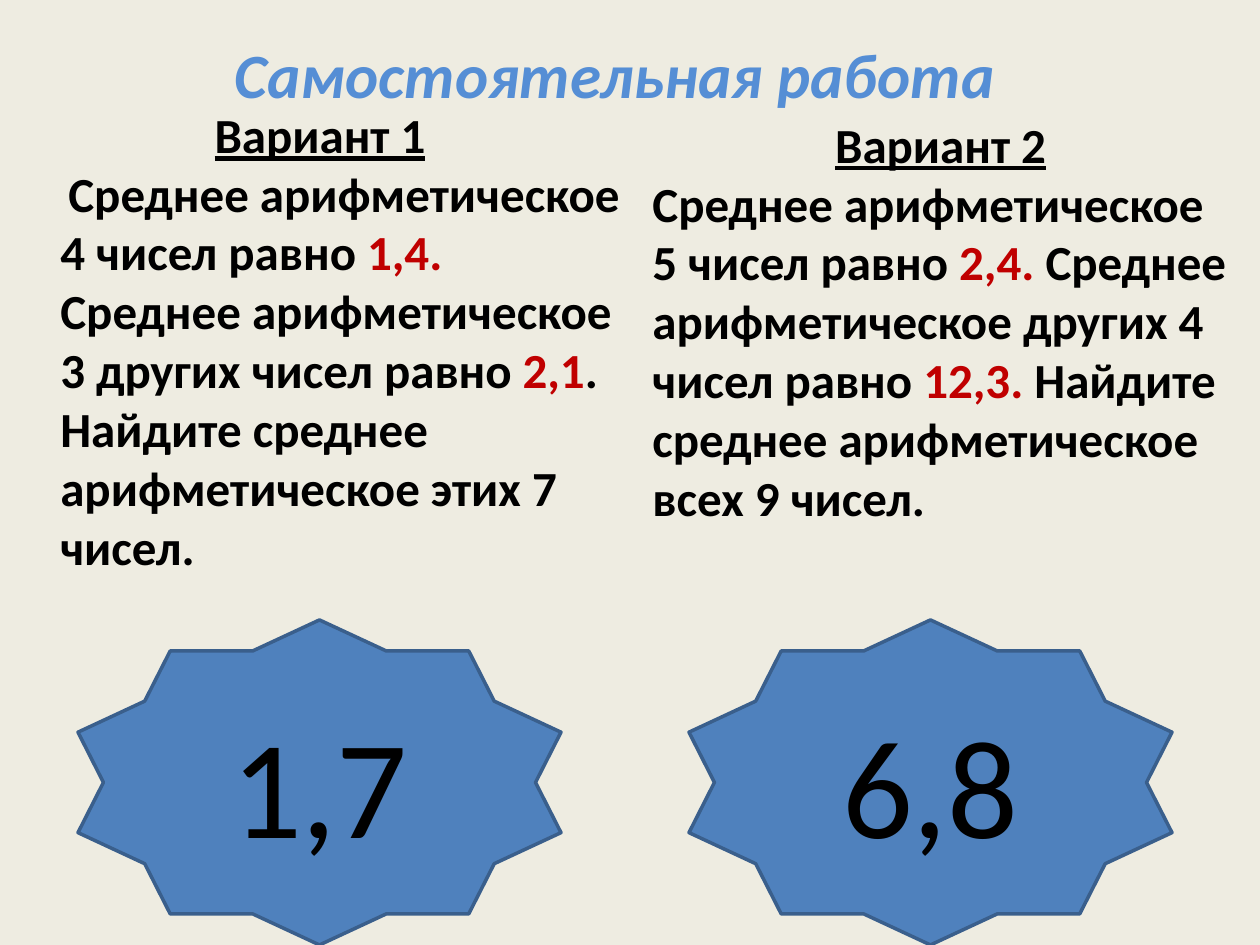
from pptx import Presentation
from pptx.dml.color import RGBColor as Rgb
from pptx.enum.shapes import MSO_SHAPE as Shape
from pptx.enum.text import MSO_ANCHOR as Anchor, PP_ALIGN as Align
from pptx.util import Pt

SCALE = 914400 / 126  # EMU in one px
FONT = "Calibri"
HUES = {
    "back": "EEECE1",
    "title": "558ED5",
    "text": "000000",
    "mark": "C00000",
    "star": "4F81BD",
    "edge": "3A5F8C",
}

# Each task: heading, box, left margin and first indent, runs of (text, hue)
TASKS = [
    ("Вариант 1", (0, 98, 640, 547), (48, 8), [
        ("Среднее арифметическое 4 чисел равно ", "text"),
        ("1,4. ", "mark"),
        ("Среднее арифметическое 3 других чисел равно ", "text"),
        ("2,1", "mark"),
        (". Найдите среднее арифметическое этих 7 чисел.", "text"),
    ]),
    ("Вариант 2", (640, 108, 601, 488), (0, 0), [
        ("Среднее арифметическое 5 чисел равно ", "text"),
        ("2,4.", "mark"),
        (" Среднее арифметическое других 4 чисел равно ", "text"),
        ("12,3.", "mark"),
        (" Найдите среднее арифметическое всех 9 чисел.", "text"),
    ]),
]
ANSWERS = ["1,7", "6,8"]
STAR_X, STAR_Y, STAR_W, STAR_H, STAR_STEP = 78, 620, 483, 325, 611


def px(num):
    return round(num * SCALE)


def hue(name):
    return Rgb.from_string(HUES[name])


def add_run(para, text, size, name="text", bold=False, italic=False, under=False):
    run = para.add_run()
    run.text = text
    font = run.font
    font.name, font.size = FONT, Pt(size)
    font.bold, font.italic, font.underline = bold, italic, under
    font.color.rgb = hue(name)


def set_title(slide, text, box):
    title = slide.shapes.title
    title.left, title.top, title.width, title.height = map(px, box)
    frame = title.text_frame
    frame.vertical_anchor = Anchor.TOP
    para = frame.paragraphs[0]
    para.alignment = Align.CENTER
    add_run(para, text, 36, "title", bold=True, italic=True)


def add_task(slide, head, box, dent, runs):
    frame = slide.shapes.add_textbox(*map(px, box)).text_frame
    frame.word_wrap = True
    para = frame.paragraphs[0]
    para.alignment = Align.CENTER
    add_run(para, head, 28, bold=True, under=True)

    body = frame.add_paragraph()
    props = body._p.get_or_add_pPr()
    props.set("marL", str(px(dent[0])))
    props.set("indent", str(px(dent[1])))
    for text, name in runs:
        add_run(body, text, 28, name, bold=True)


def add_star(slide, text, box):
    star = slide.shapes.add_shape(Shape.STAR_10_POINT, *map(px, box))
    star.shadow.inherit = False
    star.fill.solid()
    star.fill.fore_color.rgb = hue("star")
    star.line.color.rgb = hue("edge")
    star.line.width = Pt(2)
    frame = star.text_frame
    frame.vertical_anchor = Anchor.MIDDLE
    para = frame.paragraphs[0]
    para.alignment = Align.CENTER
    add_run(para, text, 80)


def main():
    deck = Presentation()
    deck.slide_width, deck.slide_height = px(1260), px(945)
    slide = deck.slides.add_slide(deck.slide_layouts[5])
    slide.background.fill.solid()
    slide.background.fill.fore_color.rgb = hue("back")

    set_title(slide, "Самостоятельная работа", (39, 29, 1152, 89))

    # Two tasks side by side
    for task in TASKS:
        add_task(slide, *task)

    # Answers below the tasks
    for col, text in enumerate(ANSWERS):
        add_star(slide, text, (STAR_X + col * STAR_STEP, STAR_Y, STAR_W, STAR_H))

    deck.save("out.pptx")


if __name__ == "__main__":
    main()
